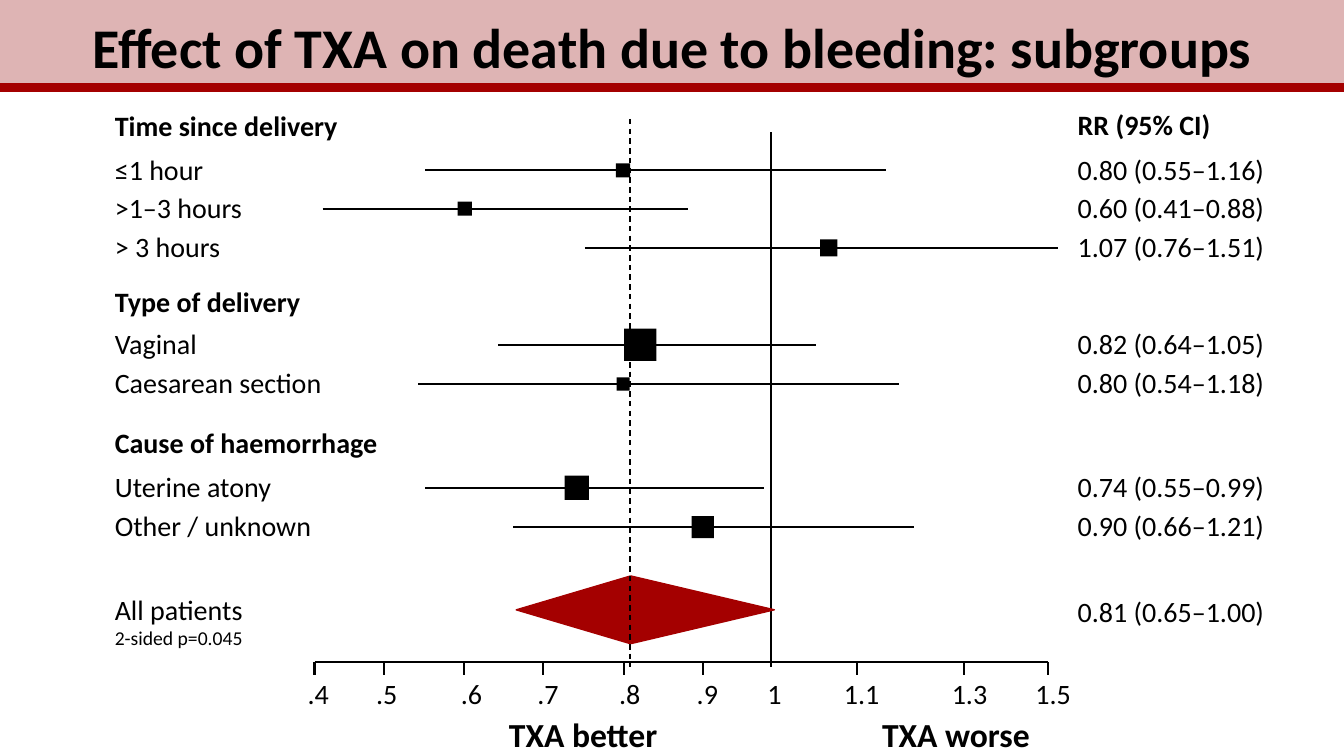
"""Build a forest plot slide of TXA effect on death due to bleeding by subgroup."""
import pptx
import pptx.util
import pptx.dml.color
import pptx.enum.dml
import pptx.enum.shapes
import pptx.enum.text
import pptx.oxml

Inches = pptx.util.Inches
Pt = pptx.util.Pt
SHAPE = pptx.enum.shapes.MSO_SHAPE
ANCHOR = pptx.enum.text.MSO_ANCHOR
ALIGN = pptx.enum.text.PP_ALIGN

THEME = {
    "font": "Calibri", "ink": "000000", "band": "DEB4B4", "accent": "A40000",
    "title": 40, "side": 24, "body": 20, "note": 14,
    "rule": 6, "line": 1.5, "thin": 1,
}

TITLE = "Effect of TXA on death due to bleeding: subgroups"
HEADINGS = [
    ("Time since delivery", 1.03),
    ("Type of delivery", 2.77),
    ("Cause of haemorrhage", 4.17),
]
# label, RR (95% CI), row y, interval start x, interval end x, estimate x, marker size
SUBGROUPS = [
    ("≤1 hour", "0.80 (0.55–1.16)", 1.69, 4.22, 8.79, 6.18, 0.14),
    (">1–3 hours", "0.60 (0.41–0.88)", 2.07, 3.2, 6.82, 4.61, 0.14),
    ("> 3 hours", "1.07 (0.76–1.51)", 2.46, 5.8, 10.49, 8.22, 0.17),
    ("Vaginal", "0.82 (0.64–1.05)", 3.42, 4.94, 8.09, 6.35, 0.32),
    ("Caesarean section", "0.80 (0.54–1.18)", 3.81, 4.15, 8.92, 6.18, 0.13),
    ("Uterine atony", "0.74 (0.55–0.99)", 4.84, 4.22, 7.58, 5.72, 0.24),
    ("Other / unknown", "0.90 (0.66–1.21)", 5.23, 5.09, 9.07, 6.97, 0.22),
]
OVERALL = ("All patients", "2-sided p=0.045", "0.81 (0.65–1.00)")
TICKS = [
    (".4", 3.12, 3.05), (".5", 3.81, 3.73), (".6", 4.6, 4.57),
    (".7", 5.39, 5.33), (".8", 6.19, 6.14), (".9", 6.97, 6.91),
    ("1", None, 7.61), ("1.1", 8.5, 8.37), ("1.3", 9.56, 9.44),
    ("1.5", 10.39, 10.27),
]
SIDES = [("TXA better", 4.95), ("TXA worse", 8.65)]

LABEL_X, CI_X, ROW_H = 1.04, 10.59, 0.44
AXIS_Y, TICK_H = 6.57, 0.13
NO_EFFECT_X, POOLED_X, POOLED_Y = 7.65, 6.25, 6.05
DIAMOND_H = 0.67
DIAMOND_HALVES = [(5.12, 1.13, 270), (6.26, 1.42, 90)]


def rgb(name):
    return pptx.dml.color.RGBColor.from_string(THEME[name])


def add_run(p, text, size, bold=False):
    r = p.add_run()
    r.text = text
    r.font.name = THEME["font"]
    r.font.size = Pt(THEME[size])
    r.font.bold = bold
    r.font.color.rgb = rgb("ink")


def add_text(s, x, y, w, h, lines, bold=False, inset=True):
    tf = s.shapes.add_textbox(Inches(x), Inches(y), Inches(w), Inches(h)).text_frame
    tf.word_wrap = True
    if not inset:
        tf.margin_left = tf.margin_right = tf.margin_top = tf.margin_bottom = 0
    for i, (text, size) in enumerate(lines):
        p = tf.add_paragraph() if i else tf.paragraphs[0]
        add_run(p, text, size, bold)


def add_shape(s, kind, x, y, w, h, fill, outlined=False):
    sp = s.shapes.add_shape(kind, Inches(x), Inches(y), Inches(w), Inches(h))
    sp.shadow.inherit = False
    sp.fill.solid()
    sp.fill.fore_color.rgb = rgb(fill)
    if outlined:
        sp.line.color.rgb = rgb(fill)
        sp.line.width = Pt(THEME["thin"])
    else:
        sp.line.fill.background()
    return sp


def add_line(s, x1, y1, x2, y2, width="line", color="ink"):
    ln = s.shapes.add_connector(
        pptx.enum.shapes.MSO_CONNECTOR.STRAIGHT,
        Inches(x1), Inches(y1), Inches(x2), Inches(y2))
    ln.line.color.rgb = rgb(color)
    ln.line.width = Pt(THEME[width])
    props = ln._element.spPr
    props.append(props.makeelement(pptx.oxml.ns.qn("a:effectLst"), {}))
    return ln


def add_title(s):
    band = add_shape(s, SHAPE.RECTANGLE, 0, 0, 13.33, 0.91, "band")
    tf = band.text_frame
    tf.word_wrap = True
    tf.vertical_anchor = ANCHOR.MIDDLE
    p = tf.paragraphs[0]
    p.alignment = ALIGN.CENTER
    add_run(p, TITLE, "title", True)
    add_line(s, 0, 0.87, 13.33, 0.87, "rule", "accent")


def add_subgroups(s):
    for text, y in HEADINGS:
        add_text(s, LABEL_X, y, 3.35, ROW_H, [(text, "body")], True)
    add_text(s, CI_X, 1.02, 2.07, ROW_H, [("RR (95% CI)", "body")], True)
    for label, ci, y, start, end, estimate, size in SUBGROUPS:
        top = y - 0.23
        add_text(s, LABEL_X, top, 3.35, ROW_H, [(label, "body")])
        add_text(s, CI_X, top, 2.36, ROW_H, [(ci, "body")])
        add_line(s, start, y, end, y)
        add_shape(s, SHAPE.RECTANGLE, estimate - size / 2, y - size / 2, size, size, "ink")


def add_overall(s):
    label, note, ci = OVERALL
    add_text(s, LABEL_X, 5.83, 3.5, 0.67, [(label, "body"), (note, "note")])
    add_text(s, CI_X, 5.85, 2.36, ROW_H, [(ci, "body")])
    add_line(s, NO_EFFECT_X, 1.31, NO_EFFECT_X, 6.62)
    for left, length, turn in DIAMOND_HALVES:
        half = add_shape(
            s, SHAPE.ISOSCELES_TRIANGLE, left + (length - DIAMOND_H) / 2,
            POOLED_Y - length / 2, DIAMOND_H, length, "accent", True)
        half.rotation = turn
    pooled = add_line(s, POOLED_X, 1.18, POOLED_X, 6.62, "thin")
    pooled.line.dash_style = pptx.enum.dml.MSO_LINE.DASH


def add_axis(s):
    add_line(s, TICKS[0][1], AXIS_Y, TICKS[-1][1], AXIS_Y)
    for label, x, label_x in TICKS:
        if x is not None:
            add_line(s, x, AXIS_Y, x, AXIS_Y + TICK_H)
        add_text(s, label_x, 6.71, 0.42, 0.4, [(label, "body")], inset=False)
    for text, x in SIDES:
        add_text(s, x, 7.03, 1.8, 0.5, [(text, "side")], True)


def main():
    prs = pptx.Presentation()
    prs.slide_width, prs.slide_height = Inches(13.33), Inches(7.5)
    s = prs.slides.add_slide(prs.slide_layouts[6])
    add_title(s)
    add_subgroups(s)
    add_overall(s)
    add_axis(s)
    prs.save("out.pptx")


if __name__ == "__main__":
    main()
